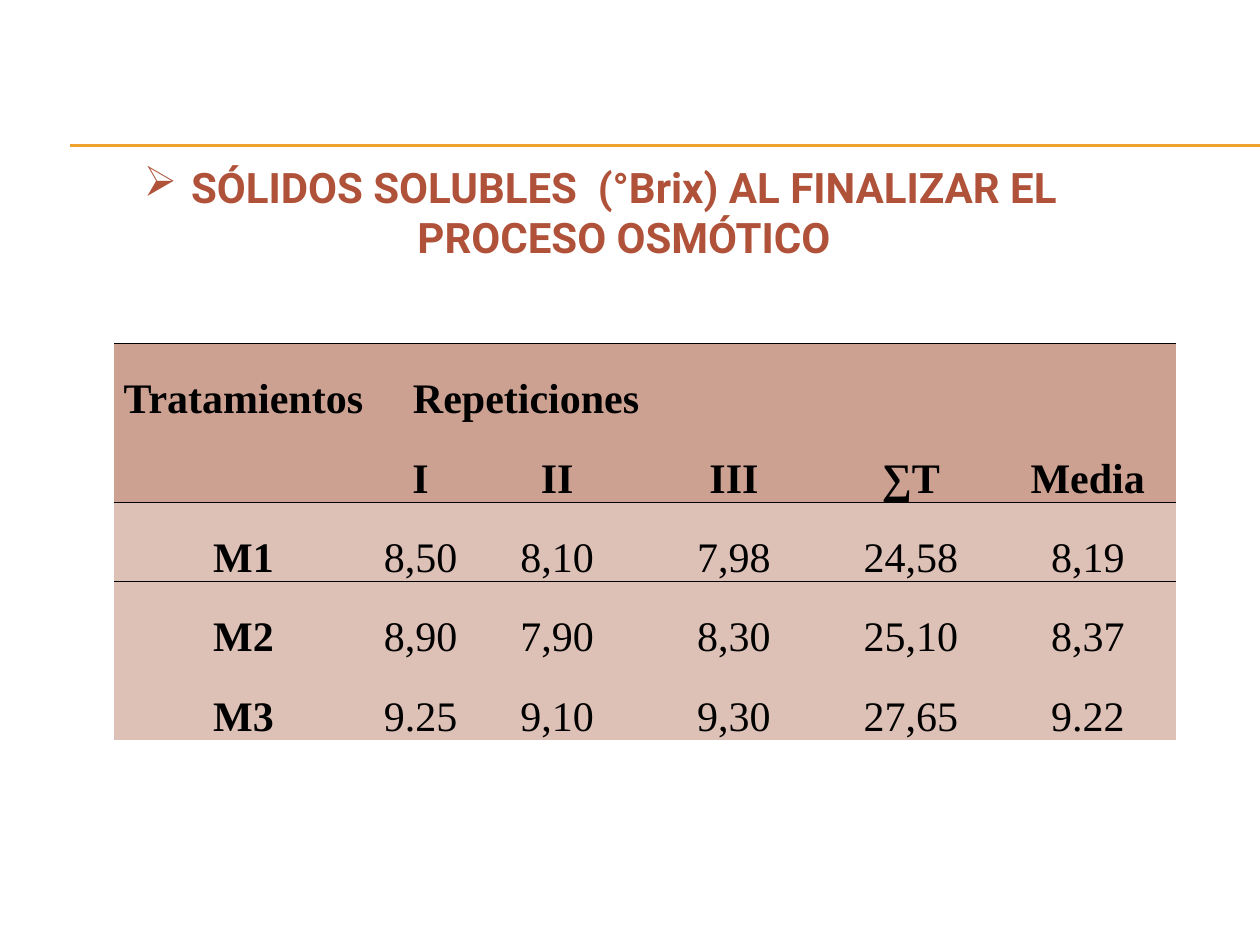
from dataclasses import dataclass
from itertools import chain

from pptx import Presentation
from pptx.dml.color import RGBColor
from pptx.enum.shapes import MSO_CONNECTOR as Connector
from pptx.enum.text import MSO_ANCHOR as Anchor, PP_ALIGN as Align
from pptx.oxml.ns import qn
from pptx.oxml.xmlchemy import OxmlElement
from pptx.slide import Slide
from pptx.util import Pt

COLORS = {
    "rule": "F0A22E",
    "title": "B05239",
    "header": "CCA192",
    "body": "DDC0B6",
    "ink": "000000",
}
NO_STYLE = "{2D5ABB26-0587-4C30-8999-92F81FD0307C}"
COLUMN_WIDTHS = [147.6, 54.9, 101.1, 101.1, 101.1, 101.1]
ROW_HEIGHT = 45.36
HEADER_ROWS = 2


@dataclass
class Rule:
    left: float
    right: float
    y: float


@dataclass
class Treatment:
    name: str
    repetitions: tuple[str, str, str]
    total: str
    mean: str

    def row(self) -> list[str]:
        return [self.name, *self.repetitions, self.total, self.mean]


RULES = [Rule(40.3, 720, 82.8), Rule(40.3, 720, 83.5)]
HEADERS = [
    ["Tratamientos", "Repeticiones", "", "", "", ""],
    ["", "I", "II", "III", "∑T", "Media"],
]
TREATMENTS = [
    Treatment("M1", ("8,50", "8,10", "7,98"), "24,58", "8,19"),
    Treatment("M2", ("8,90", "7,90", "8,30"), "25,10", "8,37"),
    Treatment("M3", ("9.25", "9,10", "9,30"), "27,65", "9.22"),
]


def color(name: str) -> RGBColor:
    return RGBColor.from_string(COLORS[name])


def draw_rule(slide: Slide, rule: Rule) -> None:
    line = slide.shapes.add_connector(
        Connector.STRAIGHT, Pt(rule.left), Pt(rule.y), Pt(rule.right), Pt(rule.y))
    line.line.color.rgb = color("rule")
    line.line.width = Pt(0.75)
    line.element.spPr.append(OxmlElement("a:effectLst"))


def draw_title(slide: Slide, text: str) -> None:
    box = slide.shapes.add_textbox(Pt(48.2), Pt(88.6), Pt(589.7), Pt(65.5))
    box.text_frame.word_wrap = True
    title = box.text_frame.paragraphs[0]
    title.text = text
    title.alignment = Align.CENTER
    title.font.name = "Roboto"
    title.font.size = Pt(24)
    title.font.bold = True
    title.font.color.rgb = color("title")

    # Hanging arrow bullet, placed ahead of the default run properties
    properties = title._p.get_or_add_pPr()
    properties.set("marL", str(Pt(27)))
    properties.set("indent", str(-Pt(27)))
    bullet = OxmlElement("a:buChar")
    bullet.set("char", "➢")
    properties.insert(0, bullet)


def add_border(cell_properties, side: str) -> None:
    border = OxmlElement(f"a:{side}")
    border.set("w", str(Pt(1)))
    fill = OxmlElement("a:solidFill")
    ink = OxmlElement("a:srgbClr")
    ink.set("val", COLORS["ink"])
    fill.append(ink)
    border.append(fill)
    cell_properties.append(border)


def draw_table(slide: Slide, rows: list[list[str]]) -> None:
    frame = slide.shapes.add_table(
        len(rows), len(COLUMN_WIDTHS), Pt(65.3), Pt(196.3),
        Pt(sum(COLUMN_WIDTHS)), Pt(ROW_HEIGHT * len(rows)))
    table = frame.table
    table.first_row = table.horz_banding = False
    frame.element.find(f".//{qn('a:tableStyleId')}").text = NO_STYLE
    for column, width in zip(table.columns, COLUMN_WIDTHS):
        column.width = Pt(width)
    for row in table.rows:
        row.height = Pt(ROW_HEIGHT)

    # Borders above the header, below it and on top of the first treatment
    borders = {0: "lnT", HEADER_ROWS - 1: "lnB", HEADER_ROWS: "lnT"}
    cell_elements = frame.element.iter(qn("a:tc"))
    texts = chain.from_iterable(rows)
    for index, (cell, element, text) in enumerate(
            zip(table.iter_cells(), cell_elements, texts)):
        row, column = divmod(index, len(COLUMN_WIDTHS))
        if row in borders:
            add_border(element.get_or_add_tcPr(), borders[row])
        cell.fill.solid()
        cell.fill.fore_color.rgb = color("header" if row < HEADER_ROWS else "body")
        cell.vertical_anchor = Anchor.BOTTOM
        cell.margin_left = cell.margin_right = Pt(3.6)
        cell.margin_top = cell.margin_bottom = Pt(0)
        cell.text = text
        label = cell.text_frame.paragraphs[0]
        label.alignment = Align.CENTER
        label.line_spacing = 1.15
        label.font.name = "Times New Roman"
        label.font.size = Pt(24)
        label.font.bold = row < HEADER_ROWS or column == 0
        label.font.color.rgb = color("ink")

    # "Repeticiones" spans two columns
    repetitions = table.cell(0, 1)
    repetitions.merge(table.cell(0, 2))
    repetitions.text_frame.paragraphs[0].alignment = Align.RIGHT


def main() -> None:
    deck = Presentation()
    deck.slide_width, deck.slide_height = Pt(720), Pt(540)
    slide = deck.slides.add_slide(deck.slide_layouts[6])
    for rule in RULES:
        draw_rule(slide, rule)
    draw_title(slide, "SÓLIDOS SOLUBLES  (°Brix) AL FINALIZAR EL PROCESO OSMÓTICO")
    draw_table(slide, HEADERS + [treatment.row() for treatment in TREATMENTS])
    deck.save("out.pptx")


if __name__ == "__main__":
    main()
